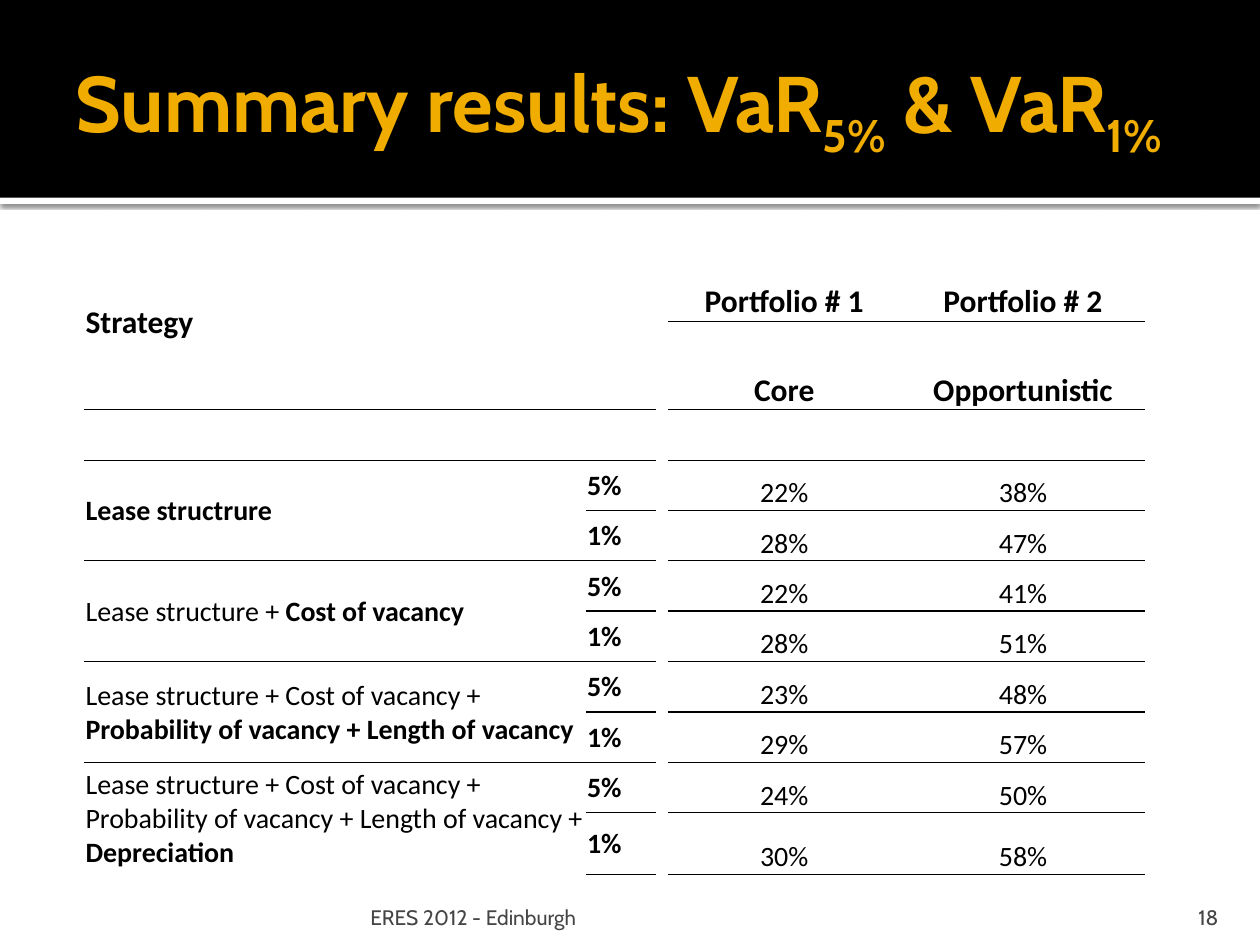
import pptx
import pptx.util
import pptx.dml.color
import pptx.enum.shapes
import pptx.enum.text
import pptx.oxml
import pptx.oxml.ns

Pt = pptx.util.Pt
RGB = pptx.dml.color.RGBColor
ANCHOR = pptx.enum.text.MSO_ANCHOR
ALIGN = pptx.enum.text.PP_ALIGN

BLACK = RGB(0x00, 0x00, 0x00)
WHITE = RGB(0xFF, 0xFF, 0xFF)
GOLD = RGB(0xF0, 0xAD, 0x00)
GRAY = RGB(0x45, 0x45, 0x45)

NS = pptx.oxml.ns.nsdecls("a")
NO_STYLE = "{2D5ABB26-0587-4C30-8999-92F81FD0307C}"


class Deck:
    """Style and current slide."""
    title = {"name": "Cabin", "size": Pt(45), "bold": True, "color": GOLD}
    footer = {"name": "Cabin", "size": Pt(12), "bold": False, "color": GRAY}
    head = {"name": "Calibri", "size": Pt(18), "bold": True, "color": BLACK}
    body = {"name": "Calibri", "size": Pt(16), "bold": False, "color": BLACK}
    strong = dict(body, bold=True)

    def __init__(self, width, height):
        self.prs = pptx.Presentation()
        self.prs.slide_width, self.prs.slide_height = Pt(width), Pt(height)
        self.s = self.prs.slides.add_slide(self.prs.slide_layouts[6])

    def runs(self, p, parts, align=ALIGN.LEFT):
        """Fill a paragraph with (text, format[, baseline]) parts."""
        p.alignment = align
        for text, fmt, *base in parts:
            r = p.add_run()
            r.text = text
            for key, value in fmt.items():
                if key == "color":
                    r.font.color.rgb = value
                else:
                    setattr(r.font, key, value)
            if base:
                r._r.get_or_add_rPr().set("baseline", str(base[0] * 1000))

    def bar(self, x, y, w, h, color, shadow=False):
        sp = self.s.shapes.add_shape(
            pptx.enum.shapes.MSO_SHAPE.RECTANGLE, Pt(x), Pt(y), Pt(w), Pt(h))
        sp.shadow.inherit = False
        sp.fill.solid()
        sp.fill.fore_color.rgb = color
        sp.line.fill.background()
        if shadow:
            effects = sp._element.spPr.find(pptx.oxml.ns.qn("a:effectLst"))
            effects.append(pptx.oxml.parse_xml(
                f'<a:outerShdw {NS} blurRad="{Pt(2.5)}" dist="{Pt(0.8)}" '
                'dir="5400000" algn="tl" rotWithShape="0"><a:srgbClr '
                'val="000000"><a:alpha val="60000"/></a:srgbClr></a:outerShdw>'))

    def text(self, x, y, w, h, parts, insets, anchor, align=ALIGN.LEFT):
        tf = self.s.shapes.add_textbox(Pt(x), Pt(y), Pt(w), Pt(h)).text_frame
        tf.word_wrap = True
        tf.vertical_anchor = anchor
        for side, value in zip(("left", "top", "right", "bottom"), insets):
            setattr(tf, "margin_" + side, Pt(value))
        self.runs(tf.paragraphs[0], parts, align)

    def table(self, x, y, cols, rows):
        tbl = self.s.shapes.add_table(len(rows), len(cols), Pt(x), Pt(y),
                                      Pt(sum(cols)), Pt(sum(rows))).table
        tbl.first_row = tbl.horz_banding = False
        tbl._tbl.tblPr.find(pptx.oxml.ns.qn("a:tableStyleId")).text = NO_STYLE
        for col, w in zip(tbl.columns, cols):
            col.width = Pt(w)
        for row, h in zip(tbl.rows, rows):
            row.height = Pt(h)
        return tbl

    def cell(self, cell, parts, anchor, align=ALIGN.LEFT):
        cell.vertical_anchor = anchor
        self.runs(cell.text_frame.paragraphs[0], parts, align)

    def cell_style(self, cell, top, bottom):
        """Insets, rules above and below (points, 0 for none), white fill."""
        for side in ("left", "top", "right"):
            setattr(cell, "margin_" + side, Pt(0.72))
        cell.margin_bottom = Pt(0)
        for tag, width in (("lnT", top), ("lnB", bottom)):
            if width:
                cell._tc.get_or_add_tcPr().append(pptx.oxml.parse_xml(
                    f'<a:{tag} {NS} w="{Pt(width)}"><a:solidFill>'
                    f'<a:srgbClr val="{BLACK}"/></a:solidFill></a:{tag}>'))
        cell.fill.solid()
        cell.fill.fore_color.rgb = WHITE


def main():
    d = Deck(720, 540)

    # Title band
    d.bar(0, 113, 720, 3.6, WHITE, shadow=True)
    d.bar(0, 0, 720, 113, BLACK)
    d.text(36, 12.24, 648, 98.64,
           [("Summary results: VaR", d.title), ("5%", d.title, -25),
            (" & VaR", d.title), ("1%", d.title, -25)],
           (7.2, 3.6, 3.6, 3.6), ANCHOR.MIDDLE)

    # Footer
    d.text(208, 509.8, 433.5, 21.6, [("ERES 2012 - Edinburgh", d.footer)],
           (3.6, 3.6, 3.6, 0), ANCHOR.BOTTOM)
    d.text(645.8, 509.8, 57.6, 21.6, [("18", d.footer)],
           (7.2, 3.6, 7.2, 0), ANCHOR.BOTTOM, ALIGN.RIGHT)

    # Table grid: two header rows, a spacer row, two rows per strategy
    cols = [286.6, 40.3, 6.5, 133.2, 139.7]
    rows = [49.7, 50.4] + [28.8] * 8 + [35.3]
    tbl = d.table(48.2, 133.9, cols, rows)

    # Rules: width below each row; the narrow gap column has none
    rules = {1: 1, 2: 0.5, 4: 1, 6: 1, 8: 1, 10: 1}

    def rule(row, col):
        if col == 2:
            return 0
        return 1 if row == 0 and col > 2 else rules.get(row, 0)

    for i in range(len(rows)):
        for j in range(len(cols)):
            d.cell_style(tbl.cell(i, j), rule(i - 1, j), rule(i, j))

    # Headers
    tbl.cell(0, 0).merge(tbl.cell(1, 0))
    d.cell(tbl.cell(0, 0), [("Strategy", d.head)], ANCHOR.MIDDLE)
    headers = [("Portfolio # 1", "Portfolio # 2"), ("Core", "Opportunistic")]
    for i, names in enumerate(headers):
        for j, name in enumerate(names, 3):
            d.cell(tbl.cell(i, j), [(name, d.head)], ANCHOR.BOTTOM, ALIGN.CENTER)

    # Strategies: earlier parts, newly added part, values at 5% and at 1%
    strategies = [
        ("", "Lease structrure", ("22%", "38%"), ("28%", "47%")),
        ("Lease structure + ", "Cost of vacancy",
         ("22%", "41%"), ("28%", "51%")),
        ("Lease structure + Cost of vacancy +",
         " Probability of vacancy + Length of vacancy",
         ("23%", "48%"), ("29%", "57%")),
        ("Lease structure + Cost of vacancy + Probability of vacancy + "
         "Length of vacancy +", " Depreciation",
         ("24%", "50%"), ("30%", "58%")),
    ]
    for n, (earlier, added, *values) in enumerate(strategies):
        top = 3 + 2 * n
        tbl.cell(top, 0).merge(tbl.cell(top + 1, 0))
        parts = [(earlier, d.body)] if earlier else []
        d.cell(tbl.cell(top, 0), parts + [(added, d.strong)], ANCHOR.MIDDLE)
        for i, (level, pair) in enumerate(zip(("5%", "1%"), values), top):
            d.cell(tbl.cell(i, 1), [(level, d.strong)], ANCHOR.MIDDLE)
            for j, value in enumerate(pair, 3):
                d.cell(tbl.cell(i, j), [(value, d.body)],
                       ANCHOR.BOTTOM, ALIGN.CENTER)

    d.prs.save("out.pptx")


if __name__ == "__main__":
    main()
